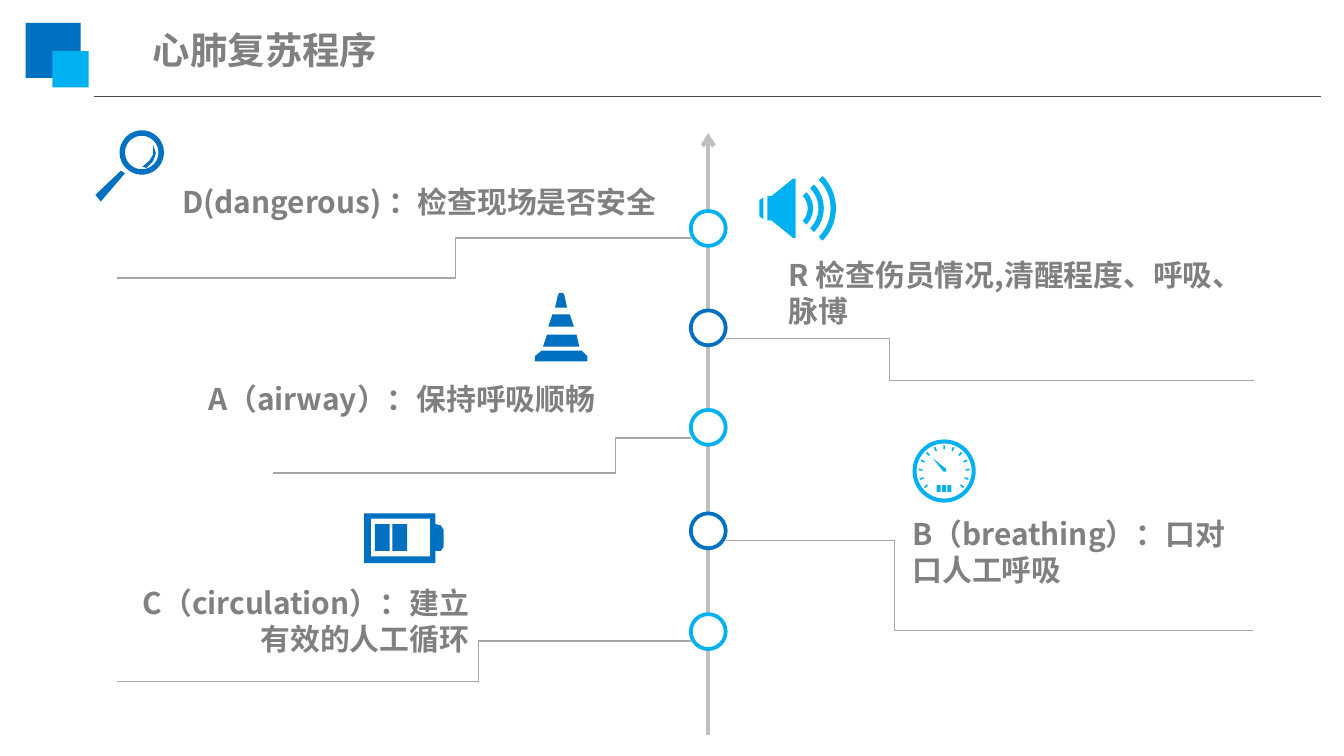
from dataclasses import dataclass
from math import cos, radians, sin

from lxml.etree import SubElement
from pptx import Presentation
from pptx.dml.color import RGBColor
from pptx.enum.shapes import MSO_CONNECTOR as Link, MSO_SHAPE as Kind
from pptx.enum.text import MSO_ANCHOR as Anchor, PP_ALIGN as Align
from pptx.oxml.ns import qn
from pptx.util import Inches, Pt


@dataclass(frozen=True)
class Theme:
    """Colours, font and type sizes of the slide."""
    deep: str = "0070C0"
    sky: str = "00B0F0"
    white: str = "FFFFFF"
    text: str = "808080"
    rule: str = "4D4948"
    axis: str = "BFBFBF"
    step: str = "A6A6A6"
    font: str = "Noto Sans CJK SC"
    title: int = 20
    body: int = 16


THEME = Theme()


def paint(shape, fill, line=None, width=2):
    """Give a shape a flat fill and an optional outline."""
    shape.shadow.inherit = False
    shape.fill.solid()
    shape.fill.fore_color.rgb = RGBColor.from_string(fill)
    if line:
        shape.line.color.rgb = RGBColor.from_string(line)
        shape.line.width = Pt(width)
    else:
        shape.line.fill.background()
    return shape


def preset(slide, kind, box, fill, **outline):
    """Add a preset shape in a box of inches."""
    return paint(slide.shapes.add_shape(kind, *map(Inches, box)), fill, **outline)


def ring(slide, box, thick, fill):
    """Add a ring whose band is a given number of inches thick."""
    preset(slide, Kind.DONUT, box, fill).adjustments[0] = thick / box[2]


def outline(slide, box, loops, fill):
    """Add one freeform of closed loops placed from the corner of a box."""
    left, top = box[:2]
    loops = [[(Inches(left + x), Inches(top + y)) for x, y in loop] for loop in loops]
    build = slide.shapes.build_freeform(*loops[0][0])
    build.add_line_segments(loops[0][1:])
    for loop in loops[1:]:
        build.move_to(*loop[0])
        build.add_line_segments(loop[1:])
    paint(build.convert_to_shape(), fill)


def bar(x, y, wide, high):
    """Return the corners of a rectangle."""
    return [(x, y), (x + wide, y), (x + wide, y + high), (x, y + high)]


def polar(x, y, reach, angle):
    """Return the point at an angle and distance from a centre."""
    return x + reach * cos(radians(angle)), y + reach * sin(radians(angle))


def link(slide, start, end, color, width=0.75, bend=None, arrow=False):
    """Add a straight line, or an elbow that turns at a share of its run."""
    kind = Link.STRAIGHT if bend is None else Link.ELBOW
    line = slide.shapes.add_connector(kind, *map(Inches, (*start, *end)))
    line.line.color.rgb = RGBColor.from_string(color)
    line.line.width = Pt(width)
    props = line._element.spPr
    if bend is not None:
        guides = props.find(qn("a:prstGeom")).find(qn("a:avLst"))
        SubElement(guides, qn("a:gd"), name="adj1", fmla=f"val {round(bend * 100000)}")
    if arrow:
        SubElement(props.find(qn("a:ln")), qn("a:tailEnd"), type="arrow")
    SubElement(props, qn("a:effectLst"))


def write(slide, text, box, size=THEME.body, align=Align.LEFT, inset=(0.05, 0.03)):
    """Add a wrapped bold text box."""
    frame = slide.shapes.add_textbox(*map(Inches, box)).text_frame
    frame.word_wrap = True
    frame.vertical_anchor = Anchor.TOP
    frame.margin_left = frame.margin_right = Inches(inset[0])
    frame.margin_top = frame.margin_bottom = Inches(inset[1])
    para = frame.paragraphs[0]
    para.alignment = align
    run = para.add_run()
    run.text = text
    run.font.name = THEME.font
    run.font.size = Pt(size)
    run.font.bold = True
    run.font.color.rgb = RGBColor.from_string(THEME.text)
    SubElement(run.font._element, qn("a:ea"), typeface=THEME.font)


def header(slide, box):
    """Draw the two squares, the title and the rule below it."""
    left, top, wide, high = box
    preset(slide, Kind.RECTANGLE, (left, top, 0.41, 0.41), THEME.deep)
    preset(slide, Kind.RECTANGLE, (left + 0.2, top + 0.21, 0.27, 0.27), THEME.sky)
    link(slide, (left + wide, top + high), (left + 0.51, top + high), THEME.rule)
    write(slide, "心肺复苏程序", (left + 0.85, top - 0.02, 2.4, 0.43),
          size=THEME.title, inset=(0.1, 0.05))


def lens(slide, box):
    """Draw a magnifying glass."""
    left, top = box[:2]
    ring(slide, (left + 0.18, top + 0.02, 0.33, 0.33), 0.04, THEME.deep)
    grip = [(0, 0.5), (0.04, 0.55), (0.22, 0.34), (0.19, 0.32)]
    glint = [(0.43, 0.13), (0.43, 0.2), (0.4, 0.25), (0.35, 0.29),
             (0.38, 0.3), (0.43, 0.25), (0.45, 0.19)]
    for loop in (grip, glint):
        outline(slide, box, [loop], THEME.deep)


def cone(slide, box):
    """Draw a striped traffic cone."""
    outline(slide, box, [
        [(0, 0.53), (0, 0.49), (0.05, 0.45), (0.35, 0.45), (0.39, 0.49), (0.39, 0.53)],
        [(0.06, 0.42), (0.09, 0.33), (0.31, 0.33), (0.33, 0.42)],
        [(0.1, 0.27), (0.13, 0.18), (0.26, 0.18), (0.29, 0.27)],
        [(0.15, 0.13), (0.17, 0.04), (0.18, 0.02), (0.21, 0.02), (0.22, 0.04), (0.24, 0.13)],
    ], THEME.deep)


def horn(slide, box):
    """Draw a loudspeaker with three concentric waves."""
    body = [(0.06, 0.16), (0.09, 0.16), (0.25, 0.03), (0.27, 0.03),
            (0.27, 0.47), (0.25, 0.47), (0.09, 0.34), (0.06, 0.34)]
    back = [(0, 0.19), (0.03, 0.17), (0.03, 0.33), (0, 0.31)]
    turns = range(-45, 46, 5)
    waves = [[polar(0.23, 0.25, reach, turn) for turn in turns]
             + [polar(0.23, 0.25, reach - 0.04, -turn) for turn in turns]
             for reach in (0.17, 0.25, 0.34)]
    for loop in (body, back, *waves):
        outline(slide, box, [loop], THEME.sky)


def cell(slide, box):
    """Draw a battery with two charge bars."""
    left, top = box[:2]
    case = [(0, 0), (0.53, 0), (0.53, 0.08), (0.57, 0.09), (0.59, 0.12),
            (0.59, 0.25), (0.57, 0.28), (0.53, 0.28), (0.53, 0.37), (0, 0.37)]
    outline(slide, box, [case, bar(0.05, 0.04, 0.44, 0.28)], THEME.deep)
    for x in (0.08, 0.21):
        preset(slide, Kind.RECTANGLE, (left + x, top + 0.08, 0.11, 0.2), THEME.deep)


def gauge(slide, box):
    """Draw a dial with ticks, a needle and three bars."""
    left, top, wide, high = box
    mid = wide / 2, high / 2
    ring(slide, box, 0.03, THEME.sky)
    for i in range(3):
        preset(slide, Kind.RECTANGLE,
               (left + 0.18 + 0.04 * i, top + 0.34, 0.03, 0.05), THEME.sky)
    needle = [(0.15, 0.14), (0.25, 0.22), (0.25, 0.24), (0.23, 0.24)]
    outline(slide, box, [needle], THEME.sky)
    for i in range(13):
        angle = 140 + i * 260 / 12
        tick = [polar(*mid, reach, angle + turn)
                for reach, turn in ((0.16, -2), (0.19, -2), (0.19, 2), (0.16, 2))]
        outline(slide, box, [tick], THEME.sky)


def spine(slide, box, stops):
    """Draw the upward axis and its alternating round stops."""
    left, top, wide, high = box
    mid = left + wide / 2
    link(slide, (mid, top + high), (mid, top), THEME.axis, width=2.25, arrow=True)
    for i, stop in enumerate(stops):
        preset(slide, Kind.OVAL, (left, top + stop, wide, wide), THEME.white,
               line=(THEME.sky, THEME.deep)[i % 2])


def main():
    """Build the slide and save it."""
    deck = Presentation()
    deck.slide_width, deck.slide_height = Inches(10), Inches(10 * 9 / 16)
    slide = deck.slides.add_slide(deck.slide_layouts[6])
    header(slide, (0.19, 0.17, 9.64, 0.55))
    spine(slide, (5.14, 0.99, 0.26, 4.48), (0.58, 1.32, 2.06, 2.83, 3.58))
    lens(slide, (0.71, 0.95, 0.53, 0.55))
    cone(slide, (3.98, 2.16, 0.39, 0.53))
    horn(slide, (5.65, 1.3, 0.57, 0.5))
    cell(slide, (2.71, 3.82, 0.59, 0.37))
    gauge(slide, (6.79, 3.27, 0.47, 0.47))
    for start, end, bend in (
        ((5.14, 1.77), (0.87, 2.07), 0.407),
        ((5.4, 2.52), (9.33, 2.83), 0.31),
        ((5.14, 3.26), (2.03, 3.52), 0.18),
        ((5.4, 4.02), (9.32, 4.69), 0.32),
        ((5.14, 4.77), (0.87, 5.07), 0.37),
    ):
        link(slide, start, end, THEME.step, bend=round(bend, 2))
    write(slide, "D(dangerous) ：检查现场是否安全", (1.12, 1.32, 4, 0.37),
          align=Align.CENTER, inset=(0.1, 0.05))
    write(slide, "R 检查伤员情况,清醒程度、呼吸、脉博", (5.82, 1.88, 3.64, 0.59))
    write(slide, "A（airway）：保持呼吸顺畅", (1.24, 2.8, 3.24, 0.5), align=Align.RIGHT)
    write(slide, "B（breathing）：口对口人工呼吸", (6.74, 3.81, 2.59, 0.86))
    write(slide, "C（circulation）：建立有效的人工循环", (0.87, 4.32, 2.67, 0.59),
          align=Align.RIGHT)
    deck.save("out.pptx")


if __name__ == "__main__":
    main()
